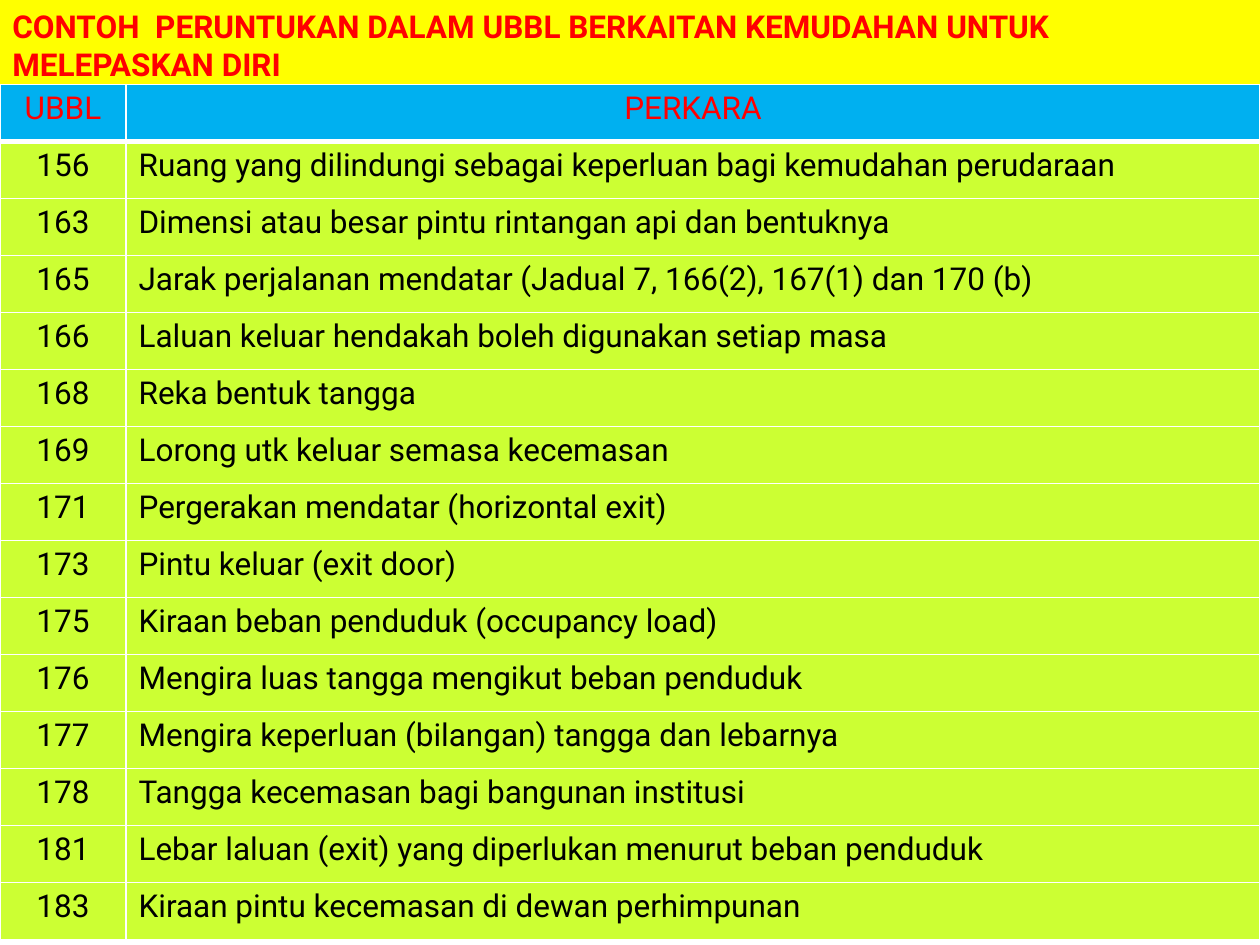
"""Build a slide listing the UBBL provisions on means of escape."""
from dataclasses import dataclass

import pptx
import pptx.dml.color
import pptx.enum.shapes
import pptx.enum.text
import pptx.oxml
import pptx.oxml.ns
import pptx.util

Pt = pptx.util.Pt
Color = pptx.dml.color.RGBColor.from_string
Align = pptx.enum.text.PP_ALIGN

TITLE = "CONTOH  PERUNTUKAN DALAM UBBL BERKAITAN KEMUDAHAN UNTUK\vMELEPASKAN DIRI"
HEADER = ("UBBL", "PERKARA")
PROVISIONS = [
    ("156", "Ruang yang dilindungi sebagai keperluan bagi kemudahan perudaraan"),
    ("163", "Dimensi atau besar pintu rintangan api dan bentuknya"),
    ("165", "Jarak perjalanan mendatar (Jadual 7, 166(2), 167(1) dan 170 (b)"),
    ("166", "Laluan keluar hendakah boleh digunakan setiap masa"),
    ("168", "Reka bentuk tangga"),
    ("169", "Lorong utk keluar semasa kecemasan"),
    ("171", "Pergerakan mendatar (horizontal exit)"),
    ("173", "Pintu keluar (exit door)"),
    ("175", "Kiraan beban penduduk (occupancy load)"),
    ("176", "Mengira luas tangga mengikut beban penduduk"),
    ("177", "Mengira keperluan (bilangan) tangga dan lebarnya"),
    ("178", "Tangga kecemasan bagi bangunan institusi"),
    ("181", "Lebar laluan (exit) yang diperlukan menurut beban penduduk"),
    ("183", "Kiraan pintu kecemasan di dewan perhimpunan"),
]
SLIDE_WIDTH, SLIDE_HEIGHT = 720, 540
TITLE_HEIGHT = 48.2
ROW_HEIGHT = 32.58
COLUMN_WIDTHS = (72, 648)


@dataclass(frozen=True)
class Theme:
    font: str = "Roboto"
    size: float = 18
    title_fill: str = "FFFF00"
    header_fill: str = "00B0F0"
    body_fill: str = "CCFF33"
    accent_text: str = "FF0000"
    body_text: str = "000000"
    border: str = "FFFFFF"
    thin: float = 1
    thick: float = 3


THEME = Theme()


def style_paragraph(paragraph, color, alignment, bold=False):
    paragraph.alignment = alignment
    font = paragraph.font
    font.name, font.size, font.bold = THEME.font, Pt(THEME.size), bold
    font.color.rgb = Color(color)


def add_borders(cell, bottom):
    properties = cell._tc.get_or_add_tcPr()
    widths = {"lnL": THEME.thin, "lnR": THEME.thin, "lnT": THEME.thin, "lnB": bottom}
    for side, width in widths.items():
        properties.append(pptx.oxml.parse_xml(
            f'<a:{side} {pptx.oxml.ns.nsdecls("a")} w="{Pt(width)}"><a:solidFill>'
            f'<a:srgbClr val="{THEME.border}"/></a:solidFill></a:{side}>'))


def add_title(slide):
    shape = slide.shapes.add_shape(
        pptx.enum.shapes.MSO_SHAPE.RECTANGLE, 0, 0, Pt(SLIDE_WIDTH), Pt(TITLE_HEIGHT))
    shape.shadow.inherit = False
    shape.fill.solid()
    shape.fill.fore_color.rgb = Color(THEME.title_fill)
    shape.line.fill.background()
    frame = shape.text_frame
    frame.word_wrap = True
    frame.vertical_anchor = pptx.enum.text.MSO_ANCHOR.MIDDLE
    frame.margin_top, frame.margin_bottom = Pt(3), 0
    frame.text = TITLE
    style_paragraph(frame.paragraphs[0], THEME.accent_text, Align.LEFT, bold=True)


def add_provisions(slide):
    rows = [HEADER, *PROVISIONS]
    table = slide.shapes.add_table(
        len(rows), len(COLUMN_WIDTHS), 0, Pt(TITLE_HEIGHT),
        Pt(SLIDE_WIDTH), Pt(ROW_HEIGHT * len(rows))).table
    for column, width in zip(table.columns, COLUMN_WIDTHS):
        column.width = Pt(width)
    for row_index, row in enumerate(rows):
        table.rows[row_index].height = Pt(ROW_HEIGHT)
        is_header = row_index == 0
        for column_index, text in enumerate(row):
            cell = table.cell(row_index, column_index)
            cell.text = text
            add_borders(cell, THEME.thick if is_header else THEME.thin)
            cell.fill.solid()
            cell.fill.fore_color.rgb = Color(
                THEME.header_fill if is_header else THEME.body_fill)
            style_paragraph(
                cell.text_frame.paragraphs[0],
                THEME.accent_text if is_header else THEME.body_text,
                Align.CENTER if is_header or column_index == 0 else Align.LEFT)


def main():
    presentation = pptx.Presentation()
    presentation.slide_width = Pt(SLIDE_WIDTH)
    presentation.slide_height = Pt(SLIDE_HEIGHT)
    slide = presentation.slides.add_slide(presentation.slide_layouts[6])
    add_title(slide)
    add_provisions(slide)
    presentation.save("out.pptx")


if __name__ == "__main__":
    main()
